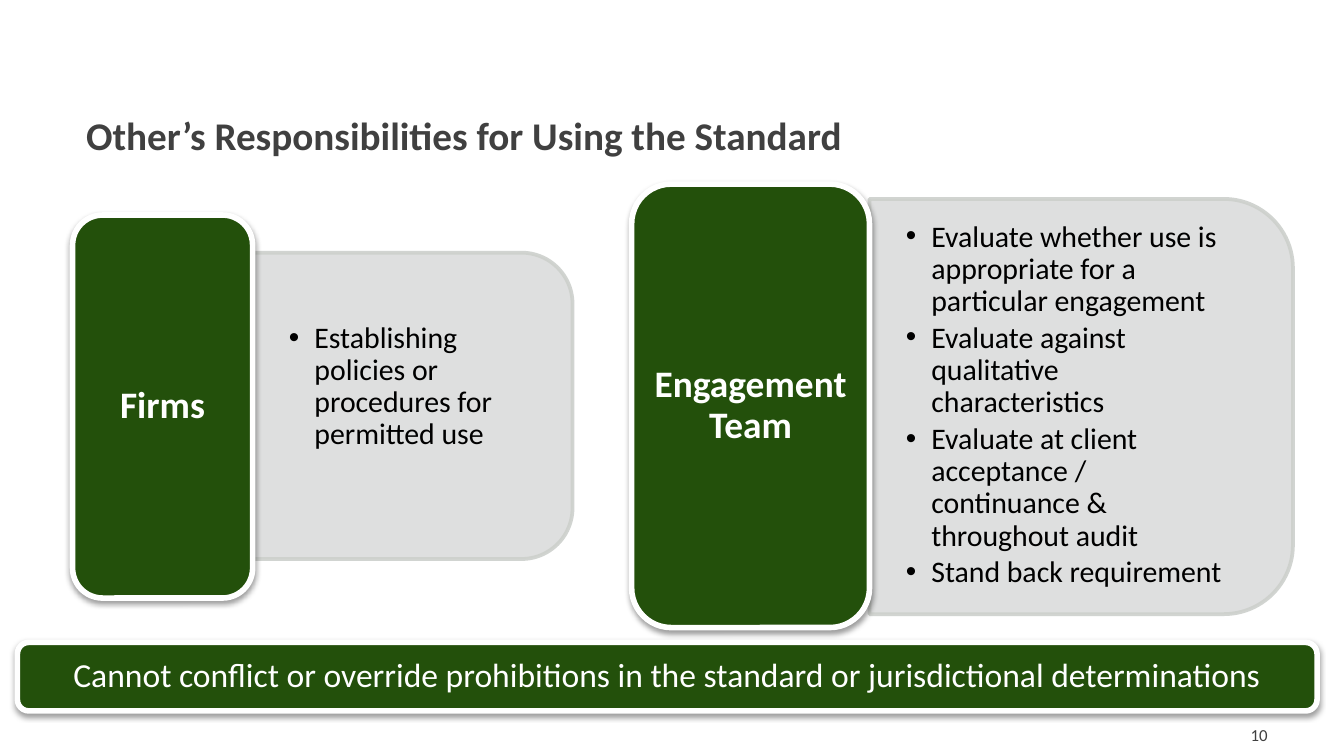
from dataclasses import dataclass

from lxml.etree import SubElement
from pptx import Presentation
from pptx.dml.color import RGBColor
from pptx.enum.shapes import MSO_SHAPE
from pptx.enum.text import MSO_ANCHOR, MSO_AUTO_SIZE, PP_ALIGN
from pptx.oxml.ns import qn
from pptx.util import Inches, Pt

FONT = "Calibri"
GREEN, WHITE, BLACK = "23500B", "FFFFFF", "000000"
DARK_GRAY, PANEL_GRAY, PANEL_EDGE = "404040", "DBDCDC", "CDD0CC"


@dataclass
class Box:
    left: float
    top: float
    width: float
    height: float

    def lengths(self) -> list:
        return [Inches(v) for v in (self.left, self.top, self.width, self.height)]


@dataclass
class Responsibility:
    party: str
    duties: list[str]
    label: Box
    panel: Box
    duties_box: Box


RESPONSIBILITIES = [
    Responsibility(
        "Firms",
        ["Establishing policies or procedures for permitted use"],
        Box(0.54, 1.6, 1.34, 2.85),
        Box(1.88, 1.88, 2.38, 2.28),
        Box(1.88, 1.85, 2.26, 2.06),
    ),
    Responsibility(
        "Engagement Team",
        [
            "Evaluate whether use is appropriate for a particular engagement",
            "Evaluate against qualitative characteristics",
            "Evaluate at client acceptance / continuance & throughout audit",
            "Stand back requirement",
        ],
        Box(4.7, 1.37, 1.77, 3.3),
        Box(6.47, 1.48, 3.15, 3.09),
        Box(6.47, 1.62, 3, 2.79),
    ),
]


def rgb(color: str) -> RGBColor:
    return RGBColor.from_string(color)


def set_font(paragraph, size: float, color: str, bold: bool = False) -> None:
    font = paragraph.font
    font.name, font.size, font.bold = FONT, Pt(size), bold
    font.color.rgb = rgb(color)


def set_frame(frame, side: float = 0.1, end: float = 0.05,
              anchor: MSO_ANCHOR = MSO_ANCHOR.MIDDLE) -> None:
    frame.word_wrap = True
    frame.auto_size = MSO_AUTO_SIZE.NONE
    frame.vertical_anchor = anchor
    frame.margin_left = frame.margin_right = Inches(side)
    frame.margin_top = frame.margin_bottom = Inches(end)


def paint(shape, fill: str, edge: str, edge_width: float) -> None:
    shape.shadow.inherit = False
    shape.fill.solid()
    shape.fill.fore_color.rgb = rgb(fill)
    shape.line.color.rgb = rgb(edge)
    shape.line.width = Pt(edge_width)


def add_drop_shadow(shape) -> None:
    effects = shape._element.spPr.find(qn("a:effectLst"))
    shadow = SubElement(effects, qn("a:outerShdw"), blurRad=str(Pt(3.1)),
                        dist=str(Pt(1.6)), dir="5400000", rotWithShape="0")
    color = SubElement(shadow, qn("a:srgbClr"), val=BLACK)
    SubElement(color, qn("a:alpha"), val="38000")


def add_green_box(slide, box: Box, text: str, size: float, bold: bool,
                  side: float, end: float) -> None:
    shape = slide.shapes.add_shape(MSO_SHAPE.ROUNDED_RECTANGLE, *box.lengths())
    paint(shape, GREEN, WHITE, 3)
    add_drop_shadow(shape)
    set_frame(shape.text_frame, side, end)
    paragraph = shape.text_frame.paragraphs[0]
    paragraph.text = text
    paragraph.alignment = PP_ALIGN.CENTER
    paragraph.line_spacing = 0.9
    set_font(paragraph, size, WHITE, bold)


def add_panel(slide, box: Box) -> None:
    """Draw a panel rounded on its right side, as a quarter-turned shape."""
    turned = Box(box.left + (box.width - box.height) / 2,
                 box.top + (box.height - box.width) / 2,
                 box.height, box.width)
    panel = slide.shapes.add_shape(MSO_SHAPE.ROUND_2_SAME_RECTANGLE, *turned.lengths())
    panel.rotation = 90
    paint(panel, PANEL_GRAY, PANEL_EDGE, 2)
    for color in panel._element.spPr.iter(qn("a:srgbClr")):
        SubElement(color, qn("a:alpha"), val="90000")


def add_duties(slide, box: Box, duties: list[str]) -> None:
    frame = slide.shapes.add_textbox(*box.lengths()).text_frame
    set_frame(frame, 0.27, 0.14)
    for i, duty in enumerate(duties):
        paragraph = frame.add_paragraph() if i else frame.paragraphs[0]
        paragraph.text = duty
        paragraph.line_spacing = 0.9
        paragraph.space_after = Pt(2.4)
        properties = paragraph._p.get_or_add_pPr()
        properties.set("marL", str(Inches(0.19)))
        properties.set("indent", str(-Inches(0.19)))
        SubElement(properties, qn("a:buFont"), typeface="Arial")
        SubElement(properties, qn("a:buChar"), char="•")
        set_font(paragraph, 16, BLACK)


def add_title(slide, box: Box, text: str) -> None:
    title = slide.shapes.title
    title.left, title.top, title.width, title.height = box.lengths()
    set_frame(title.text_frame, anchor=MSO_ANCHOR.TOP)
    paragraph = title.text_frame.paragraphs[0]
    paragraph.text = text
    paragraph.alignment = PP_ALIGN.LEFT
    paragraph.line_spacing = 1.1
    set_font(paragraph, 21, DARK_GRAY, True)


def add_page_number(slide, box: Box, number: str) -> None:
    frame = slide.shapes.add_textbox(*box.lengths()).text_frame
    set_frame(frame)
    paragraph = frame.paragraphs[0]
    paragraph.text = number
    paragraph.alignment = PP_ALIGN.RIGHT
    set_font(paragraph, 9, DARK_GRAY)


def main() -> None:
    presentation = Presentation()
    presentation.slide_width = Inches(10)
    presentation.slide_height = presentation.slide_width * 9 // 16
    slide = presentation.slides.add_slide(presentation.slide_layouts[5])

    add_title(slide, Box(0.54, 0.74, 8.68, 0.53),
              "Other’s Responsibilities for Using the Standard")
    add_page_number(slide, Box(7.28, 5.32, 2.25, 0.3), "10")
    for item in RESPONSIBILITIES:
        add_panel(slide, item.panel)
        add_duties(slide, item.duties_box, item.duties)
        add_green_box(slide, item.label, item.party, 20, True, 0.08, 0.04)
    add_green_box(
        slide, Box(0.13, 4.78, 9.67, 0.51),
        "Cannot conflict or override prohibitions in the standard"
        " or jurisdictional determinations",
        18, False, 0.07, 0.07)

    presentation.save("out.pptx")


if __name__ == "__main__":
    main()
